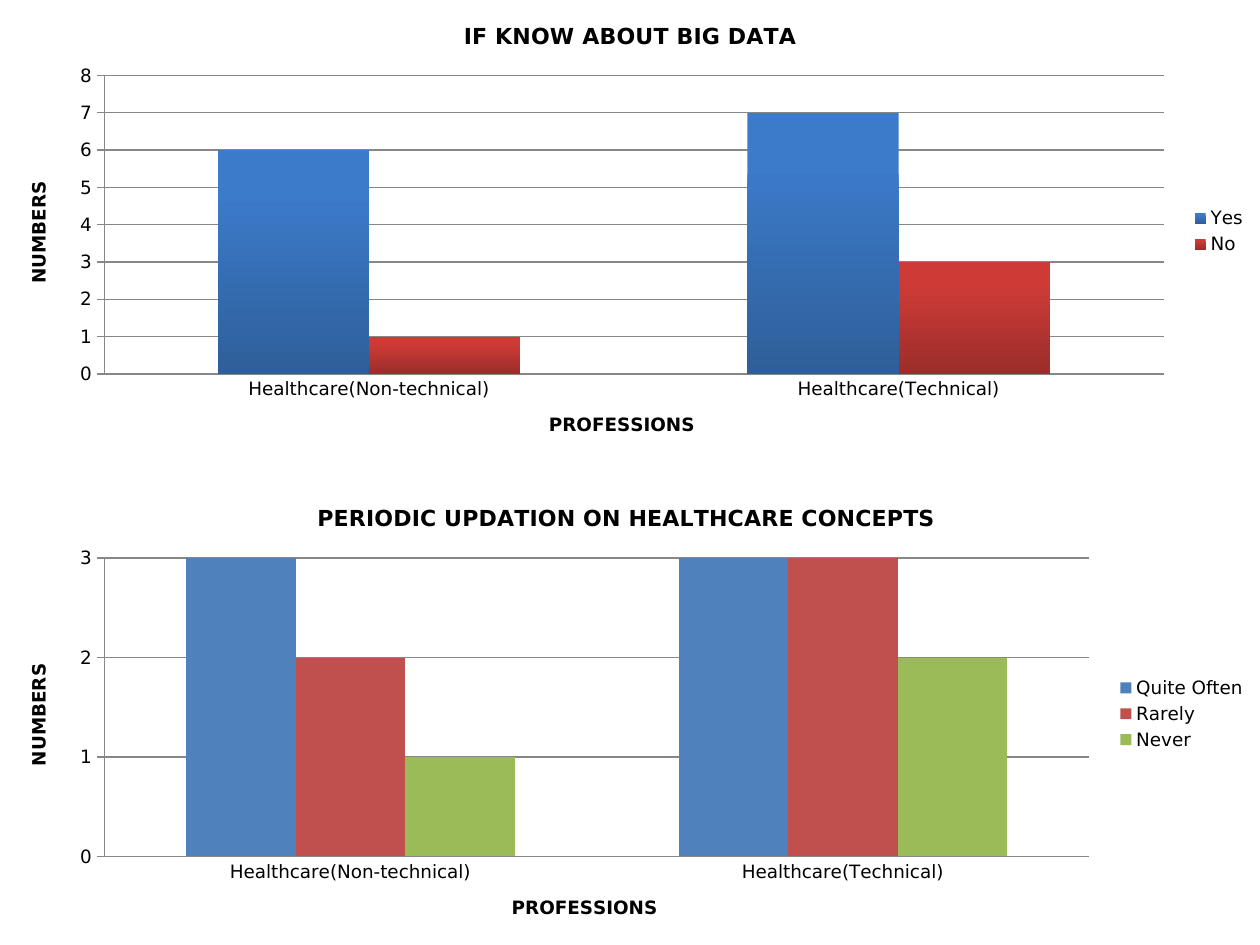
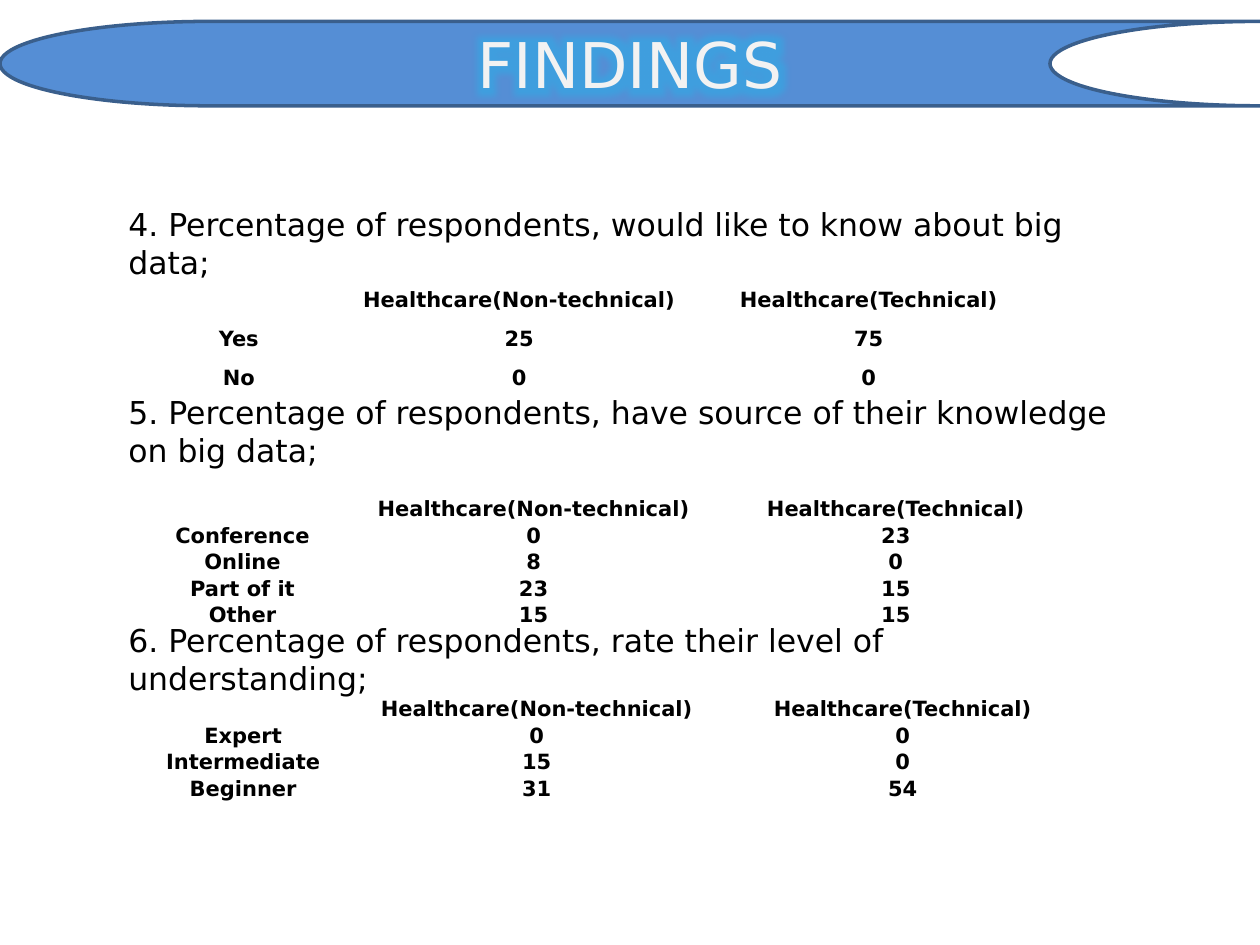
from lxml import etree
from pptx import Presentation
from pptx.chart.data import CategoryChartData
from pptx.dml.color import RGBColor
from pptx.enum import chart as charts, shapes, text
from pptx.oxml.ns import qn
from pptx.util import Inches, Pt

FONT = "DejaVu Sans"
BLACK = RGBColor(0x00, 0x00, 0x00)
GRID = RGBColor(0x87, 0x87, 0x87)
BANNER = RGBColor(0x55, 0x8E, 0xD5)
BANNER_LINE = RGBColor(0x3A, 0x5F, 0x8C)
BANNER_TEXT = RGBColor(0xF2, 0xF2, 0xF2)
GLOW = RGBColor(0x1F, 0xB9, 0xEE)
BLUE = RGBColor(0x4F, 0x81, 0xBD)
RED = RGBColor(0xC0, 0x50, 0x4D)
GREEN = RGBColor(0x9B, 0xBB, 0x59)
BLUE_SHADE = (RGBColor(0x3C, 0x7A, 0xCA), RGBColor(0x2E, 0x5F, 0x99))
RED_SHADE = (RGBColor(0xCE, 0x3B, 0x37), RGBColor(0x9B, 0x2D, 0x2A))
PLAIN_TABLE = "{2D5ABB26-0587-4C30-8999-92F81FD0307C}"
GROUPS = ["Healthcare(Non-technical)", "Healthcare(Technical)"]


class SlideBuilder:
    """Holds the deck, the current slide and the shared style."""

    def __init__(self):
        self.deck = Presentation()
        self.deck.slide_width, self.deck.slide_height = Inches(10), Inches(7.5)
        self.page = None

    def new_page(self):
        self.page = self.deck.slides.add_slide(self.deck.slide_layouts[6])

    def style(self, font, size, color=BLACK, bold=False):
        font.name, font.size, font.bold = FONT, Pt(size), bold
        font.color.rgb = color

    def caption(self, title, wording, size):
        """Writes a chart title or an axis title."""
        title.text_frame.text = wording
        self.style(title.text_frame.paragraphs[0].runs[0].font, size, bold=True)

    def banner(self, wording):
        shape = self.page.shapes.add_shape(
            shapes.MSO_SHAPE.FLOWCHART_STORED_DATA,
            Inches(0), Inches(0.17), Inches(10), Inches(0.67))
        shape.shadow.inherit = False
        shape.fill.solid()
        shape.fill.fore_color.rgb = BANNER
        shape.line.color.rgb = BANNER_LINE
        shape.line.width = Pt(2)
        frame = shape.text_frame
        frame.text = wording
        frame.vertical_anchor = text.MSO_ANCHOR.MIDDLE
        para = frame.paragraphs[0]
        para.alignment = text.PP_ALIGN.CENTER
        self.style(para.runs[0].font, 36, BANNER_TEXT)
        self.glow(shape)

    def glow(self, shape):
        """Puts a soft glow around the words of a shape."""
        fill = shape.element.xpath(".//a:rPr/a:solidFill")[0]
        effects = etree.Element(qn("a:effectLst"))
        glow = etree.SubElement(effects, qn("a:glow"), rad=str(Inches(0.25)))
        color = etree.SubElement(glow, qn("a:srgbClr"), val=str(GLOW))
        etree.SubElement(color, qn("a:alpha"), val="40000")
        fill.addnext(effects)

    def statement(self, wording, top, width, height):
        box = self.page.shapes.add_textbox(
            Inches(0.92), Inches(top), Inches(width), Inches(height))
        frame = box.text_frame
        frame.word_wrap = True
        frame.auto_size = text.MSO_AUTO_SIZE.SHAPE_TO_FIT_TEXT
        frame.text = wording
        self.style(frame.paragraphs[0].runs[0].font, 18)

    def table(self, answers, top, widths, row_height):
        rows = [["", *GROUPS], *answers]
        holder = self.page.shapes.add_table(
            len(rows), len(widths), Inches(1.17), Inches(top),
            Inches(sum(widths)), Inches(row_height * len(rows)))
        holder.element.xpath(".//a:tableStyleId")[0].text = PLAIN_TABLE
        table = holder.table
        table.first_row = table.horz_banding = False
        for column, width in zip(table.columns, widths):
            column.width = Inches(width)
        for row, values in zip(table.rows, rows):
            row.height = Inches(row_height)
            for cell, value in zip(row.cells, values):
                self.fill_cell(cell, str(value))

    def fill_cell(self, cell, wording):
        cell.fill.background()
        cell.vertical_anchor = text.MSO_ANCHOR.BOTTOM
        cell.margin_left = cell.margin_right = cell.margin_top = Inches(0.01)
        cell.margin_bottom = 0
        para = cell.text_frame.paragraphs[0]
        para.alignment = text.PP_ALIGN.CENTER
        span = para.add_run()
        span.text = wording
        self.style(span.font, 12, bold=True)

    def column_chart(self, title, series, top, maximum):
        """Draws clustered columns; series rows are (name, values, fill)."""
        data = CategoryChartData()
        data.categories = GROUPS
        for name, values, _ in series:
            data.add_series(name, values)
        chart = self.page.shapes.add_chart(
            charts.XL_CHART_TYPE.COLUMN_CLUSTERED,
            Inches(0), Inches(top), Inches(10), Inches(3.67), data).chart
        self.style(chart.font, 10.5)
        self.white_border(chart)
        chart.has_title = True
        self.caption(chart.chart_title, title, 12.6)
        chart.has_legend = True
        chart.legend.position = charts.XL_LEGEND_POSITION.RIGHT
        chart.legend.include_in_layout = False

        numbers, professions = chart.value_axis, chart.category_axis
        self.caption(numbers.axis_title, "NUMBERS", 10.5)
        self.caption(professions.axis_title, "PROFESSIONS", 10.5)
        numbers.minimum_scale, numbers.maximum_scale = 0, maximum
        numbers.major_unit = 1
        numbers.has_major_gridlines = True
        numbers.major_tick_mark = charts.XL_TICK_MARK.OUTSIDE
        professions.major_tick_mark = charts.XL_TICK_MARK.NONE
        for part in (numbers, professions, numbers.major_gridlines):
            part.format.line.color.rgb = GRID
            part.format.line.width = Pt(0.75)

        plot = chart.plots[0]
        plot.gap_width, plot.overlap = 150, 0
        plot.vary_by_categories = False
        for columns, (_, _, color) in zip(plot.series, series):
            columns.invert_if_negative = False
            self.fill_columns(columns.format.fill, color)

    def white_border(self, chart):
        look = etree.Element(qn("c:spPr"))
        line = etree.Element(qn("a:ln"), w=str(Pt(0.75)))
        for parent in (look, line):
            fill = etree.SubElement(parent, qn("a:solidFill"))
            etree.SubElement(fill, qn("a:srgbClr"), val="FFFFFF")
        look.append(line)
        chart.element.find(qn("c:chart")).addnext(look)

    def fill_columns(self, fill, color):
        """Takes one colour, or a (top, bottom) pair for a gradient."""
        if isinstance(color, RGBColor):
            fill.solid()
            fill.fore_color.rgb = color
            return
        fill.gradient()
        fill.gradient_angle = 270
        for stop, shade, position in zip(fill.gradient_stops, color, (0.2, 1)):
            stop.color.rgb = shade
            stop.position = position


def main():
    builder = SlideBuilder()

    builder.new_page()
    builder.column_chart(
        "IF KNOW ABOUT BIG DATA",
        [("Yes", (6, 7), BLUE_SHADE), ("No", (1, 3), RED_SHADE)],
        top=0, maximum=8)
    builder.column_chart(
        "PERIODIC UPDATION ON HEALTHCARE CONCEPTS ",
        [("Quite Often", (4, 4), BLUE), ("Rarely", (2, 4), RED),
         ("Never", (1, 2), GREEN)],
        top=3.83, maximum=3)

    builder.new_page()
    builder.table([("Yes", 25, 75), ("No", 0, 0)],
                  2.17, (1.45, 3, 2.55), 0.31)
    builder.banner("FINDINGS")
    builder.statement(
        "4. Percentage of respondents, would like to know about big data;",
        1.58, 8.17, 0.71)
    builder.statement(
        "5. Percentage of respondents, have source of their knowledge on big data;",
        3.07, 8.25, 1.01)
    builder.table([("Conference", 0, 23), ("Online", 8, 0),
                   ("Part of it", 23, 15), ("Other", 15, 15)],
                  3.83, (1.51, 3.11, 2.64), 0.21)
    builder.statement(
        "6. Percentage of respondents, rate their level of understanding;",
        4.88, 7.5, 0.71)
    builder.table([("Expert", 0, 0), ("Intermediate", 15, 0),
                   ("Beginner", 31, 54)],
                  5.42, (1.52, 3.14, 2.67), 0.21)

    builder.deck.save("out.pptx")


if __name__ == "__main__":
    main()
